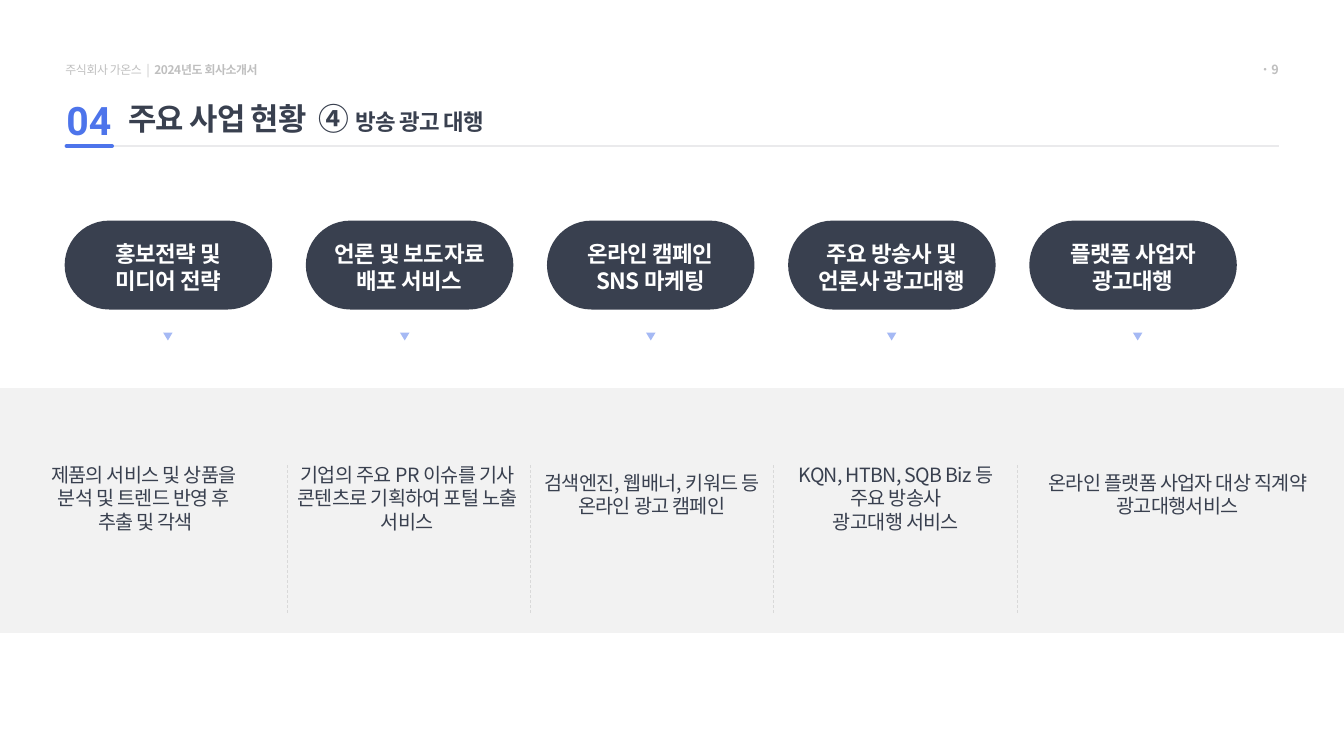
from collections import namedtuple

from pptx import Presentation
from pptx import util as u
from pptx.dml.color import RGBColor
from pptx.enum import dml, shapes, text
from pptx.oxml import ns
from lxml import etree

COLORS = {"navy": "39404F", "blue": "4D74EB", "band": "F2F2F2", "white": "FFFFFF",
          "muted": "BFBFBF", "pale": "D9D9D9"}
KOREAN = "Noto Sans CJK KR"
LATIN = "Roboto"

Box = namedtuple("Box", "left top width height")
Span = namedtuple("Span", "words size color bold spacing font", defaults=(False, 0, KOREAN))
Service = namedtuple("Service", "title arrow_left detail detail_box")

SERVICES = [
    Service(["홍보전략 및", "미디어 전략"], 4.11,
            ["제품의 서비스 및 상품을 ", "분석 및 트렌드 반영 후 ", "추출 및 각색"],
            Box(0.28, 11.53, 6.78, 2.06)),
    Service(["언론 및 보도자료", "배포 서비스"], 10.08,
            ["기업의 주요 PR 이슈를 기사 콘텐츠로 기획하여 포털 노출 서비스"],
            Box(7.24, 11.53, 6.05, 2.06)),
    Service(["온라인 캠페인", "SNS 마케팅"], 16.28,
            ["검색엔진, 웹배너, 키워드 등 온라인 광고 캠페인"],
            Box(13.39, 11.73, 6.07, 1.45)),
    Service(["주요 방송사 및", "언론사 광고대행"], 22.35,
            ["KQN, HTBN, SQB Biz 등", "주요 방송사", "광고대행 서비스"],
            Box(19.86, 11.53, 5.44, 2.06)),
    Service(["플랫폼 사업자", "광고대행"], 28.55,
            ["온라인 플랫폼 사업자 대상 직계약 광고대행서비스"],
            Box(25.93, 11.73, 7.49, 1.45)),
]


def color(name):
    return RGBColor.from_string(COLORS[name])


def set_alpha(fill_parent, percent):
    tint = fill_parent.find(".//" + ns.qn("a:srgbClr"))
    etree.SubElement(tint, ns.qn("a:alpha"), val=str(percent * 1000))


def write(frame, lines, align, insets=(0, 0, 0, 0), wrap=False, anchor=text.MSO_ANCHOR.MIDDLE):
    frame.word_wrap = wrap
    frame.vertical_anchor = anchor
    frame.margin_left, frame.margin_top, frame.margin_right, frame.margin_bottom = map(u.Cm, insets)
    for index, spans in enumerate(lines):
        para = frame.paragraphs[0] if index == 0 else frame.add_paragraph()
        para.alignment = align
        for span in spans:
            run = para.add_run()
            run.text = span.words
            run.font.size = u.Pt(span.size)
            run.font.bold = span.bold
            run.font.color.rgb = color(span.color)
            run.font.name = span.font
            properties = run.font._element
            properties.set("spc", str(int(span.spacing * 100)))
            etree.SubElement(properties, ns.qn("a:ea"), typeface=KOREAN)


def add_text(page, box, lines, align, **options):
    area = page.shapes.add_textbox(*map(u.Cm, box))
    write(area.text_frame, lines, align, **options)


def add_block(page, kind, box, fill):
    block = page.shapes.add_shape(kind, *map(u.Cm, box))
    block.shadow.inherit = False
    block.fill.solid()
    block.fill.fore_color.rgb = color(fill)
    block.line.fill.background()
    return block


def add_line(page, start, end, tone, width):
    line = page.shapes.add_connector(shapes.MSO_CONNECTOR.STRAIGHT, *map(u.Cm, start + end))
    line.line.color.rgb = color(tone)
    line.line.width = u.Pt(width)
    etree.SubElement(line._element.spPr, ns.qn("a:effectLst"))
    return line


def header(page, box):
    right = box.left + box.width
    base = box.top + box.height
    rule = add_line(page, (box.left + 1.04, base), (right, base), "navy", 0.5)
    set_alpha(rule.line._ln, 30)
    accent = add_line(page, (box.left, base), (box.left + 1.14, base), "blue", 3)
    accent.line._ln.set("cap", "rnd")
    add_text(page, Box(box.left - 0.28, box.top, 5.92, 0.61),
             [[Span("주식회사 가온스  ", 8.5, "muted", False, -0.3),
               Span("|  ", 8.5, "pale", True, -0.3),
               Span("2024년도 회사소개서", 8.5, "muted", True, -0.3)]],
             text.PP_ALIGN.LEFT, insets=(0.25, 0.13, 0.25, 0.13), anchor=text.MSO_ANCHOR.TOP)
    add_text(page, Box(right - 3.81, box.top + 0.05, 3.81, 0.51),
             [[Span("・", 9, "muted", False, -0.3), Span("9", 9, "muted", True, -0.3)]],
             text.PP_ALIGN.RIGHT)
    add_text(page, Box(box.left + 1.55, box.top + 0.81, 28.75, 1.45),
             [[Span("주요 사업 현황  ④ ", 22, "navy", True, -0.5, LATIN),
               Span("방송 광고 대행", 16, "navy", True, -0.5)]],
             text.PP_ALIGN.LEFT)
    add_text(page, Box(box.left - 0.05, box.top + 0.84, 1.22, 1.45),
             [[Span("04", 28, "blue", True, 0, LATIN)]], text.PP_ALIGN.CENTER)


def service_titles(page, box):
    pill_width = 5.23
    step = (box.width - pill_width) / (len(SERVICES) - 1)
    for index, service in enumerate(SERVICES):
        pill = add_block(page, shapes.MSO_SHAPE.ROUNDED_RECTANGLE,
                         Box(box.left + index * step, box.top, pill_width, box.height), "navy")
        pill.adjustments[0] = 0.5
        write(pill.text_frame, [[Span(line, 16, "white", True, -0.3)] for line in service.title],
              text.PP_ALIGN.CENTER, insets=(0, 0.1, 0, 0), wrap=True)
        arrow = add_block(page, shapes.MSO_SHAPE.ISOSCELES_TRIANGLE,
                          Box(service.arrow_left, box.top + 2.82, 0.24, 0.2), "blue")
        arrow.rotation = 180
        set_alpha(arrow._element.spPr, 50)


def service_details(page, box):
    add_block(page, shapes.MSO_SHAPE.RECTANGLE, box, "band")
    for service in SERVICES:
        add_text(page, service.detail_box,
                 [[Span(line, 14, "navy", False, -0.5)] for line in service.detail],
                 text.PP_ALIGN.CENTER, insets=(0.25, 0.13, 0.25, 0.13), wrap=True,
                 anchor=text.MSO_ANCHOR.TOP)
    for index in range(len(SERVICES) - 1):
        across = box.left + 7.24 + index * 6.13
        divider = add_line(page, (across, box.top + 1.95), (across, box.top + 5.71), "pale", 0.5)
        divider.line.dash_style = dml.MSO_LINE.DASH


def main():
    deck = Presentation()
    deck.slide_width, deck.slide_height = u.Cm(33.87), u.Cm(19.05)
    page = deck.slides.add_slide(deck.slide_layouts[6])
    header(page, Box(1.68, 1.45, 30.55, 2.23))
    service_titles(page, Box(1.63, 5.56, 29.54, 2.24))
    service_details(page, Box(0, 9.78, 33.87, 6.17))
    deck.save("out.pptx")


if __name__ == "__main__":
    main()
